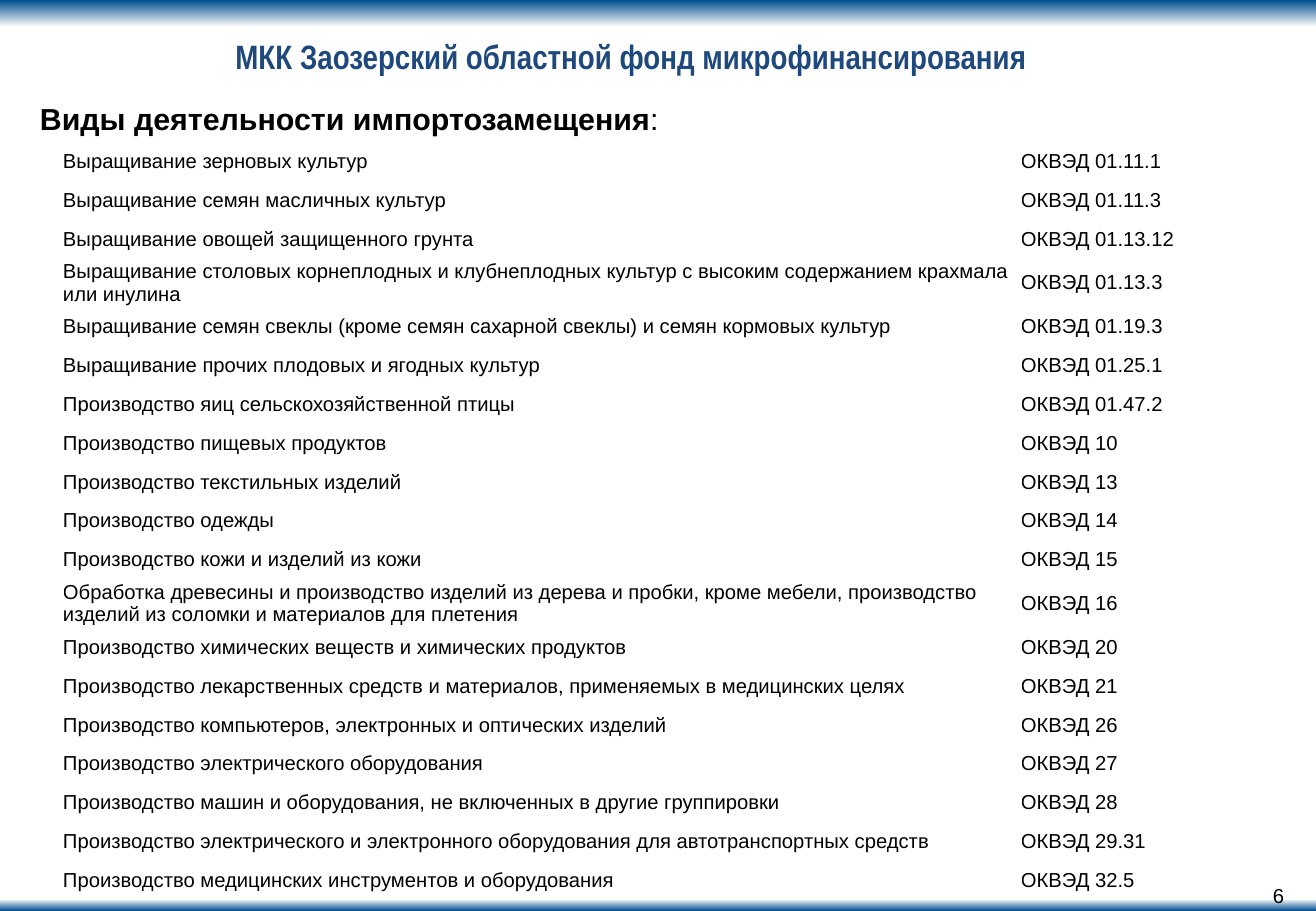
from pptx import Presentation, util as u
from pptx.dml.color import RGBColor
from pptx.enum import shapes, text

BLUE = RGBColor(0x00, 0x4E, 0x8E)
NAVY = RGBColor(0x1F, 0x49, 0x7D)
BLACK = RGBColor(0, 0, 0)
WHITE = RGBColor(255, 255, 255)
WIDE, HIGH = 1316, 911
SCALE = 914400 / 121.5

ROWS = [
    ("Выращивание зерновых культур", "01.11.1"),
    ("Выращивание семян масличных культур", "01.11.3"),
    ("Выращивание овощей защищенного грунта", "01.13.12"),
    ("Выращивание столовых корнеплодных и клубнеплодных культур "
     "с высоким содержанием крахмала или инулина", "01.13.3"),
    ("Выращивание семян свеклы (кроме семян сахарной свеклы) "
     "и семян кормовых культур", "01.19.3"),
    ("Выращивание прочих плодовых и ягодных культур", "01.25.1"),
    ("Производство яиц сельскохозяйственной птицы", "01.47.2"),
    ("Производство пищевых продуктов", "10"),
    ("Производство текстильных изделий", "13"),
    ("Производство одежды", "14"),
    ("Производство кожи и изделий из кожи", "15"),
    ("Обработка древесины и производство изделий из дерева и пробки, "
     "кроме мебели, производство изделий из соломки и материалов "
     "для плетения", "16"),
    ("Производство химических веществ и химических продуктов", "20"),
    ("Производство лекарственных средств и материалов, "
     "применяемых в медицинских целях", "21"),
    ("Производство компьютеров, электронных и оптических изделий", "26"),
    ("Производство электрического оборудования", "27"),
    ("Производство машин и оборудования, не включенных "
     "в другие группировки", "28"),
    ("Производство электрического и электронного оборудования "
     "для автотранспортных средств", "29.31"),
    ("Производство медицинских инструментов и оборудования", "32.5"),
]
LONG = 90


def px(*nums):
    """Turn pixels into a list of EMU lengths."""
    return [u.Emu(round(n * SCALE)) for n in nums]


def write(para, words, size=12, font="Arial", color=BLACK, bold=False,
          align=text.PP_ALIGN.LEFT):
    """Add one formatted run to a paragraph."""
    para.alignment = align
    run = para.add_run()
    run.text = words
    run.font.size = u.Pt(size)
    run.font.name = font
    run.font.color.rgb = color
    run.font.bold = bold


def trim(item):
    """Remove the inner margins of a cell or text frame."""
    item.margin_left = item.margin_right = 0
    item.margin_top = item.margin_bottom = 0


def band(slide, top, high, angle):
    """Draw a full-width strip fading from blue to white."""
    strip = slide.shapes.add_shape(shapes.MSO_SHAPE.RECTANGLE,
                                   *px(0, top, WIDE, high))
    strip.shadow.inherit = False
    strip.line.fill.background()
    strip.fill.gradient()
    strip.fill.gradient_angle = angle
    for stop, color in zip(strip.fill.gradient_stops, (BLUE, WHITE)):
        stop.color.rgb = color


def title(slide, words):
    """Place and fill the title."""
    head = slide.shapes.title
    head.left, head.top, head.width, head.height = px(17, 35, 1228, 41)
    frame = head.text_frame
    trim(frame)
    frame.vertical_anchor = text.MSO_ANCHOR.MIDDLE
    write(frame.paragraphs[0], words, size=20, font="Arial Narrow",
          color=NAVY, bold=True, align=text.PP_ALIGN.CENTER)


def box(slide, *place):
    """Add a wrapping text box and return its frame."""
    frame = slide.shapes.add_textbox(*px(*place)).text_frame
    frame.word_wrap = True
    return frame


def grid(slide, left, top, cols, high, tall):
    """Add the table of activities, with taller rows for long names."""
    table = slide.shapes.add_table(
        len(ROWS), len(cols), *px(left, top, sum(cols), high)).table
    table.first_row = table.horz_banding = False
    for col, wide in zip(table.columns, px(*cols)):
        col.width = wide
    count = sum(len(name) > LONG for name, _ in ROWS)
    short = (high - count * tall) / (len(ROWS) - count)
    for row, (name, code) in zip(table.rows, ROWS):
        row.height, = px(tall if len(name) > LONG else short)
        for cell, words in zip(row.cells, (name, f"ОКВЭД {code}")):
            cell.fill.background()
            cell.vertical_anchor = text.MSO_ANCHOR.MIDDLE
            trim(cell)
            write(cell.text_frame.paragraphs[0], words)


def main():
    """Build and save the slide."""
    deck = Presentation()
    deck.slide_width, deck.slide_height = px(WIDE, HIGH)
    slide = deck.slides.add_slide(deck.slide_layouts[5])
    band(slide, HIGH - 12, 12, 90)
    band(slide, 0, 27, 270)
    title(slide, "МКК Заозерский областной фонд микрофинансирования")
    page = box(slide, 1010, 883, 274, 24)
    trim(page)
    write(page.paragraphs[0], "6", align=text.PP_ALIGN.RIGHT)
    para = box(slide, 28, 94, 650, 49).paragraphs[0]
    write(para, "Виды деятельности импортозамещения", size=18, bold=True)
    write(para, ":", size=18)
    grid(slide, 63, 142, (958, 198), 758, 49)
    deck.save("out.pptx")


if __name__ == "__main__":
    main()
